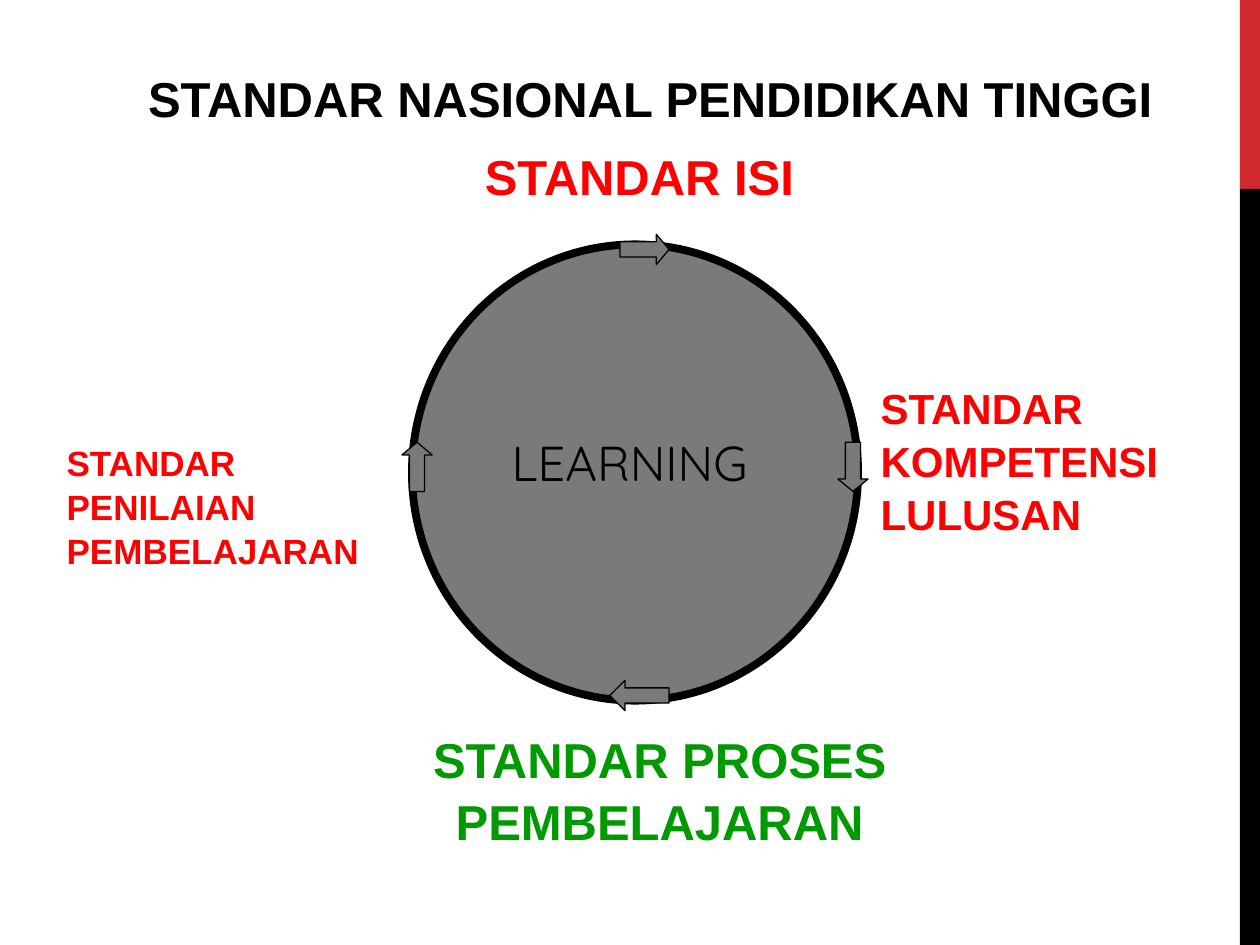
from pptx import Presentation
from pptx.dml.color import RGBColor
from pptx.enum.shapes import MSO_SHAPE
from pptx.enum.text import MSO_ANCHOR, MSO_AUTO_SIZE, PP_ALIGN
from pptx.util import Inches, Pt

BLACK = RGBColor(0x00, 0x00, 0x00)
RED = RGBColor(0xFF, 0x00, 0x00)
GREEN = RGBColor(0x00, 0x99, 0x00)
GREY = RGBColor(0x7A, 0x7A, 0x7A)
BAND_RED = RGBColor(0xD1, 0x28, 0x2E)
LEFT, CENTER = PP_ALIGN.LEFT, PP_ALIGN.CENTER

WIDTH, HEIGHT = 10, 7.5
BAND_W, BAND_SPLIT = 0.16, HEIGHT / 5
CYCLE = (3.27, 1.94, 3.54, 3.62)

TITLE = "STANDAR NASIONAL PENDIDIKAN TINGGI"
TITLE_BOX = (0.83, 0.47, 8.66, 0.57)

# text, box, size, colour, alignment
STANDARDS = [
    ("STANDAR ISI", (3.75, 1.09, 2.66, 0.57), 28, RED, LEFT),
    ("STANDAR KOMPETENSI LULUSAN", (6.89, 2.97, 3.11, 1.31), 24, RED, LEFT),
    ("STANDAR PROSES PEMBELAJARAN", (2.97, 5.72, 4.53, 1.04), 28, GREEN, CENTER),
    ("STANDAR PENILAIAN PEMBELAJARAN", (0.43, 3.44, 2.69, 1.11), 20, RED, LEFT),
]

# preset, box, head length as a share of the arrow's breadth
ARROWS = [
    (MSO_SHAPE.DOWN_ARROW, (6.65, 3.51, 0.24, 0.39), 0.41),
    (MSO_SHAPE.UP_ARROW, (3.19, 3.51, 0.24, 0.39), 0.42),
    (MSO_SHAPE.RIGHT_ARROW, (4.92, 1.86, 0.39, 0.24), 0.42),
    (MSO_SHAPE.LEFT_ARROW, (4.84, 5.4, 0.47, 0.24), 0.5),
]


def add_shape(s, preset, box, fill, line_width=None):
    sp = s.shapes.add_shape(preset, *map(Inches, box))
    sp.shadow.inherit = False
    sp.fill.solid()
    sp.fill.fore_color.rgb = fill
    if line_width:
        sp.line.color.rgb = BLACK
        sp.line.width = Pt(line_width)
    else:
        sp.line.fill.background()
    return sp


def write(sp, text, size, color, align, font="Arial", bold=True):
    tf = sp.text_frame
    tf.word_wrap = True
    tf.auto_size = MSO_AUTO_SIZE.SHAPE_TO_FIT_TEXT
    tf.vertical_anchor = MSO_ANCHOR.TOP
    p = tf.paragraphs[0]
    p.alignment = align
    p.line_spacing = 1.05
    r = p.add_run()
    r.text = text
    for name, value in {"name": font, "size": Pt(size), "bold": bold}.items():
        setattr(r.font, name, value)
    r.font.color.rgb = color
    return tf


def add_text(s, text, box, *style, **options):
    return write(s.shapes.add_textbox(*map(Inches, box)), text, *style, **options)


def main():
    prs = Presentation()
    prs.slide_width, prs.slide_height = Inches(WIDTH), Inches(HEIGHT)
    s = prs.slides.add_slide(prs.slide_layouts[5])

    title = s.shapes.title
    title.left, title.top, title.width, title.height = map(Inches, TITLE_BOX)
    write(title, TITLE, 28, BLACK, CENTER)

    band_x = WIDTH - BAND_W
    add_shape(s, MSO_SHAPE.RECTANGLE, (band_x, 0, BAND_W, BAND_SPLIT), BAND_RED)
    add_shape(s, MSO_SHAPE.RECTANGLE,
              (band_x, BAND_SPLIT, BAND_W, HEIGHT - BAND_SPLIT), BLACK)

    add_shape(s, MSO_SHAPE.OVAL, CYCLE, GREY, 4.5)
    tf = add_text(s, "LEARNING", (3.66, 3.36, 2.91, 0.57), 28, BLACK, LEFT,
                  font="Quicksand", bold=False)
    tf.margin_left = Inches(0.4)

    for text, box, size, color, align in STANDARDS:
        add_text(s, text, box, size, color, align)
    for preset, box, head in ARROWS:
        arrow = add_shape(s, preset, box, GREY, 0.75)
        arrow.adjustments[0] = 0.5
        arrow.adjustments[1] = head

    prs.save("out.pptx")


if __name__ == "__main__":
    main()
